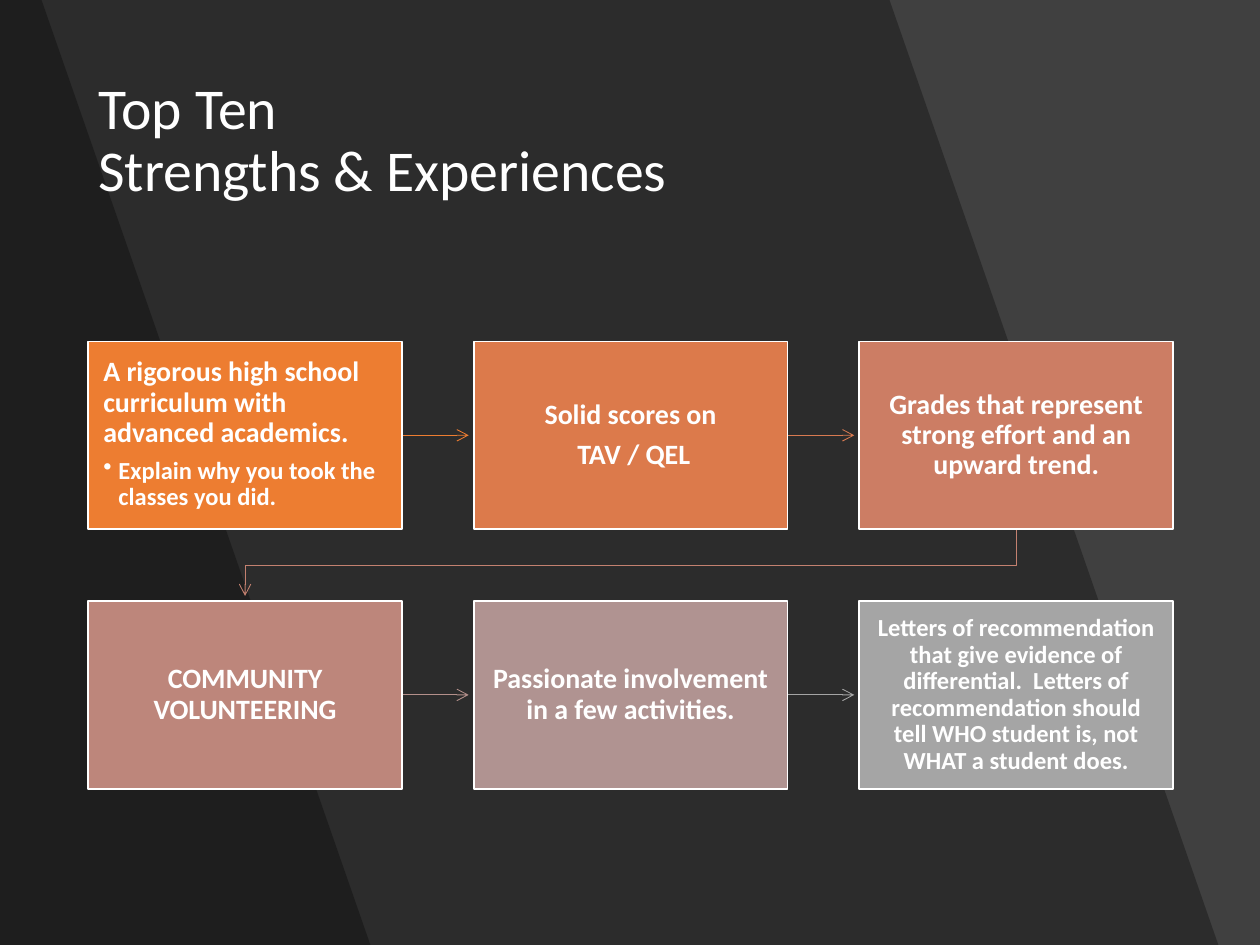
from lxml import etree
from pptx import Presentation
from pptx.dml.color import RGBColor
from pptx.enum.shapes import MSO_CONNECTOR, MSO_SHAPE
from pptx.enum.text import MSO_ANCHOR, MSO_AUTO_SIZE, PP_ALIGN
from pptx.oxml.ns import qn
from pptx.util import Inches, Pt

COLORS = {
    "black": "000000", "white": "FFFFFF", "backdrop": "404040",
    "academics": "ED7D31", "scores": "DC7A4B", "grades": "CC7D64",
    "community": "BD867B", "passion": "B09391", "letters": "A5A5A5",
    "to_scores": "ED7D31", "to_grades": "D87A51", "to_community": "C48170",
    "to_passion": "B4908B", "to_letters": "A5A5A5",
}
FONT = "Calibri"

# Each step: color key, paragraphs as (text, size)
STEPS = [
    ("academics", [("A rigorous high school curriculum with advanced academics.", 16),
                   ("Explain why you took the classes you did.", 14)]),
    ("scores", [("Solid scores on", 16), (" TAV / QEL", 16)]),
    ("grades", [("Grades that represent strong effort and an upward trend.", 16)]),
    ("community", [("COMMUNITY VOLUNTEERING", 16)]),
    ("passion", [("Passionate involvement in a few activities.", 16)]),
    ("letters", [("Letters of recommendation that give evidence of differential.  "
                  "Letters of recommendation should tell WHO student is, "
                  "not WHAT a student does.", 14)]),
]
COLUMNS = 3
STEP_WIDTH, STEP_HEIGHT = 2.49, 1.49
COLUMN_PITCH, ROW_PITCH = 3.06, 2.06
ARROW_GAP = 0.04


def rgb(name):
    return RGBColor.from_string(COLORS[name])


def format_text(paragraph, text, size, bold=False, align=PP_ALIGN.LEFT, space_after=0):
    paragraph.text = text
    paragraph.alignment = align
    paragraph.line_spacing = 0.9
    paragraph.space_before = Pt(0)
    paragraph.space_after = Pt(space_after)
    for run in paragraph.runs:
        run.font.name = FONT
        run.font.size = Pt(size)
        run.font.bold = bold
        run.font.color.rgb = rgb("white")
    for line_break in paragraph._p.findall(qn("a:br")):
        etree.SubElement(line_break, qn("a:rPr"), sz=str(size * 100))


def add_bullet(paragraph):
    paragraph.level = 1
    properties = paragraph._p.get_or_add_pPr()
    properties.set("marL", str(Inches(0.12)))
    properties.set("indent", str(-Inches(0.12)))
    etree.SubElement(properties, qn("a:buChar"), char="•")


def set_arrow_line(shape, color):
    shape.line.color.rgb = rgb(color)
    shape.line.width = Pt(0.5)
    line = shape.line._get_or_add_ln()
    etree.SubElement(line, qn("a:tailEnd"), type="arrow")


def add_outline(slide, points, close=True):
    corners = [(Inches(x), Inches(y)) for x, y in points]
    builder = slide.shapes.build_freeform(*corners[0], scale=1.0)
    builder.add_line_segments(corners[1:], close=close)
    shape = builder.convert_to_shape()
    shape.shadow.inherit = False
    return shape


def add_background(slide, width, height):
    slide.background.fill.solid()
    slide.background.fill.fore_color.rgb = rgb("black")
    backdrop = slide.shapes.add_shape(
        MSO_SHAPE.RECTANGLE, 0, 0, Inches(width), Inches(height))
    backdrop.shadow.inherit = False
    backdrop.fill.solid()
    backdrop.fill.fore_color.rgb = rgb("backdrop")
    backdrop.line.fill.background()
    # Slanted translucent bands
    for top_edge, bottom_edge in ((7.06, 9.67), (0.33, 2.94)):
        band = add_outline(slide, [(0, 0), (top_edge, 0), (bottom_edge, height), (0, height)])
        band.fill.solid()
        band.fill.fore_color.rgb = rgb("black")
        band.line.fill.background()
        color = band._element.spPr.find(qn("a:solidFill")).find(qn("a:srgbClr"))
        etree.SubElement(color, qn("a:alpha"), val="30000")


def add_title(slide, left, top, width, height):
    title = slide.shapes.title
    title.left, title.top = Inches(left), Inches(top)
    title.width, title.height = Inches(width), Inches(height)
    frame = title.text_frame
    frame.vertical_anchor = MSO_ANCHOR.MIDDLE
    frame.auto_size = MSO_AUTO_SIZE.NONE
    format_text(frame.paragraphs[0], "Top Ten \vStrengths & Experiences", 33)
    # Bring the title in front of the background
    slide.shapes._spTree.append(title._element)


def add_step(slide, left, top, color, paragraphs):
    step = slide.shapes.add_shape(
        MSO_SHAPE.RECTANGLE, Inches(left), Inches(top),
        Inches(STEP_WIDTH), Inches(STEP_HEIGHT))
    step.shadow.inherit = False
    step.fill.solid()
    step.fill.fore_color.rgb = rgb(color)
    step.line.color.rgb = rgb("white")
    step.line.width = Pt(1)
    frame = step.text_frame
    frame.word_wrap = True
    frame.margin_left = frame.margin_right = Inches(0.12)
    frame.margin_top = frame.margin_bottom = Inches(0.13)
    has_bullet = color == "academics"
    frame.vertical_anchor = MSO_ANCHOR.TOP if has_bullet else MSO_ANCHOR.MIDDLE
    align = PP_ALIGN.LEFT if has_bullet else PP_ALIGN.CENTER
    for index, (text, size) in enumerate(paragraphs):
        paragraph = frame.add_paragraph() if index else frame.paragraphs[0]
        bulleted = has_bullet and index > 0
        format_text(paragraph, text, size, bold=True, align=align,
                    space_after=size * (0.15 if bulleted else 0.35))
        if bulleted:
            add_bullet(paragraph)


def add_straight_arrow(slide, left, top, color):
    """Join the step at this corner to the next one in its row."""
    y = Inches(top + STEP_HEIGHT / 2)
    arrow = slide.shapes.add_connector(
        MSO_CONNECTOR.STRAIGHT, Inches(left + STEP_WIDTH), y,
        Inches(left + COLUMN_PITCH - ARROW_GAP), y)
    set_arrow_line(arrow, color)
    etree.SubElement(arrow._element.spPr, qn("a:effectLst"))


def add_return_arrow(slide, left, top, color):
    """Join the last step of the first row to the first step of the next."""
    end_x = left + STEP_WIDTH / 2
    start_x = end_x + (COLUMNS - 1) * COLUMN_PITCH
    start_y = top + STEP_HEIGHT
    middle_y = (start_y + top + ROW_PITCH) / 2
    arrow = add_outline(slide, [
        (start_x, start_y), (start_x, middle_y), (end_x, middle_y),
        (end_x, top + ROW_PITCH - ARROW_GAP)], close=False)
    arrow.fill.background()
    set_arrow_line(arrow, color)


def add_process(slide, left, top):
    for index, (color, paragraphs) in enumerate(STEPS):
        row, column = divmod(index, COLUMNS)
        step_left = left + column * COLUMN_PITCH
        step_top = top + row * ROW_PITCH
        if index + 1 < len(STEPS):
            arrow_color = "to_" + STEPS[index + 1][0]
            if column + 1 < COLUMNS:
                add_straight_arrow(slide, step_left, step_top, arrow_color)
            else:
                add_return_arrow(slide, left, step_top, arrow_color)
        add_step(slide, step_left, step_top, color, paragraphs)


def main():
    presentation = Presentation()
    presentation.slide_width = Inches(10)
    presentation.slide_height = Inches(7.5)
    slide = presentation.slides.add_slide(presentation.slide_layouts[5])
    add_background(slide, 10, 7.5)
    add_title(slide, 0.68, 0.4, 8.63, 1.45)
    add_process(slide, 0.7, 2.71)
    presentation.save("out.pptx")


if __name__ == "__main__":
    main()
